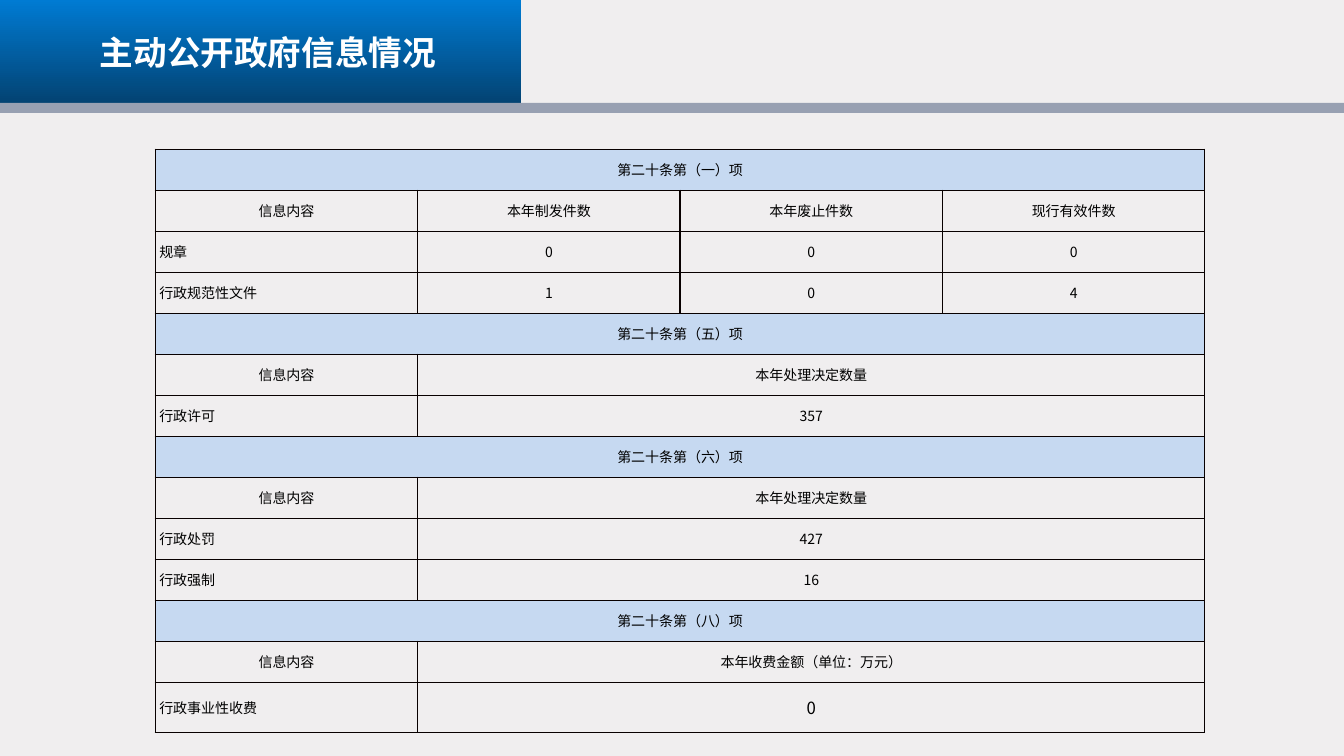
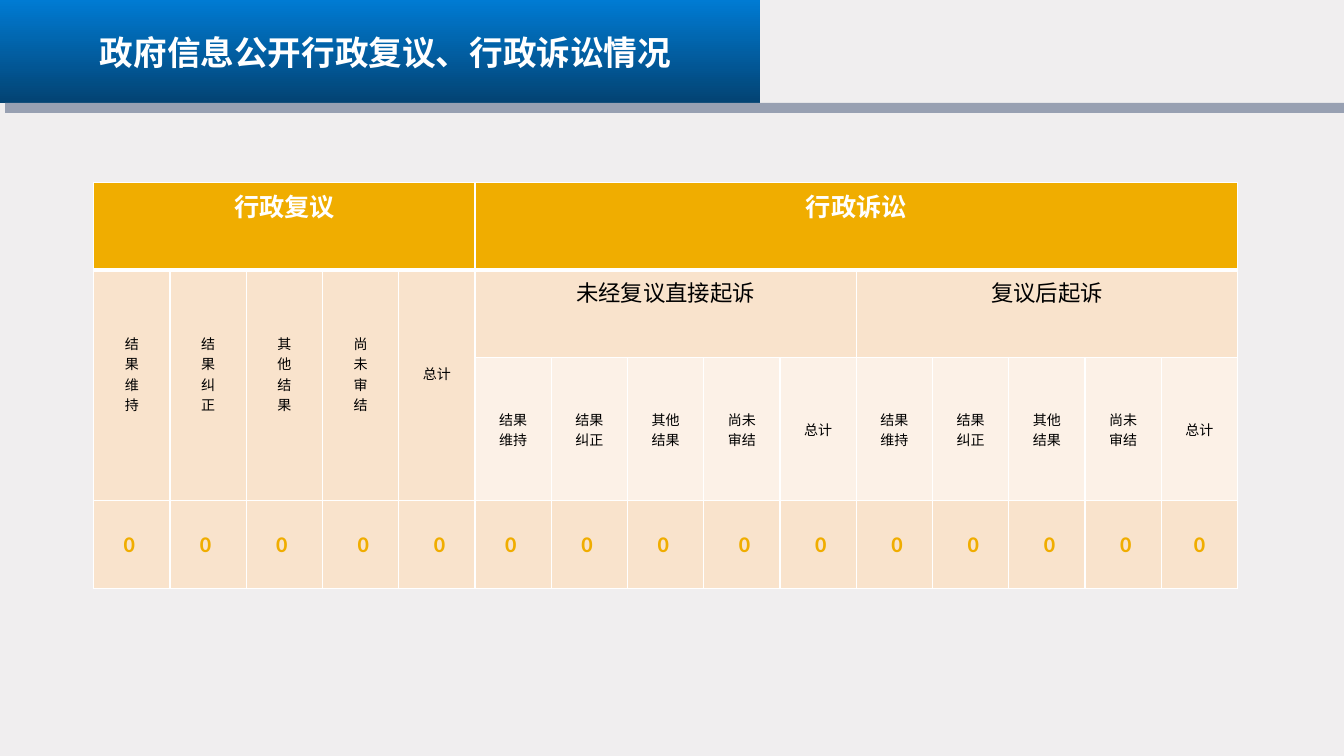
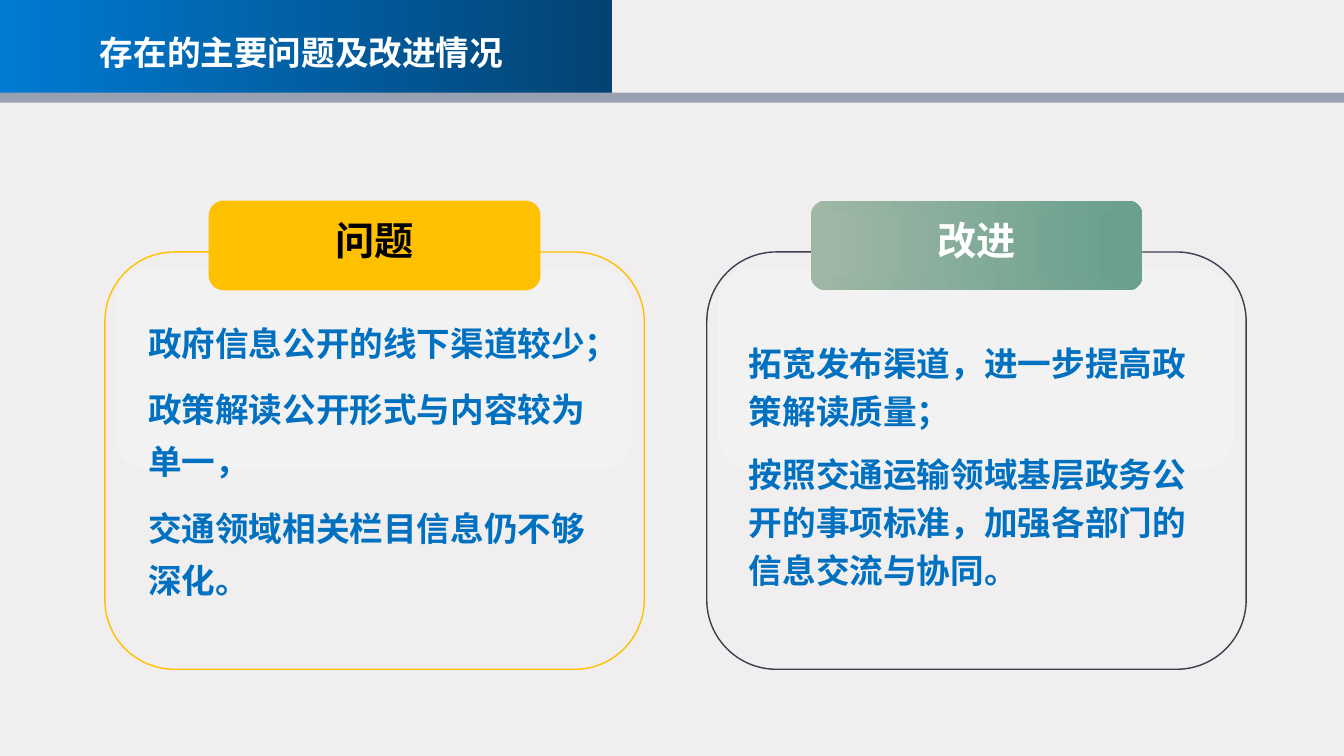
from dataclasses import dataclass
from typing import Optional

from lxml.etree import SubElement
from pptx import Presentation
from pptx.dml.color import RGBColor
from pptx.enum.shapes import MSO_SHAPE
from pptx.enum.text import MSO_ANCHOR, MSO_AUTO_SIZE, PP_ALIGN
from pptx.oxml import parse_xml
from pptx.oxml.ns import nsdecls, qn
from pptx.util import Inches, Pt

COLORS = {
    "background": "F0EEEF", "band_start": "007BD3", "band_end": "034373",
    "rule": "98A0B2", "white": "FFFFFF", "black": "000000",
    "grid": "080000", "section": "C6D9F1", "gold": "F0AD00",
    "cream": "F9E3CC", "ivory": "FCF1E7", "amber": "FFC000",
    "slate": "3B3E4D", "panel": "F2F2F2", "body": "0070C0",
    "sage": "A0B7A5", "green": "6AA18E",
}
FONT = "Noto Sans CJK SC"
SLIDE_WIDTH = 13.33
RESULTS = ["结果维持", "结果纠正", "其他结果", "尚未审结", "总计"]
DISCLOSURE_ROWS = [
    ("第二十条第（一）项",),
    ("信息内容", "本年制发件数", "本年废止件数", "现行有效件数"),
    ("规章", "0", "0", "0"),
    ("行政规范性文件", "1", "0", "4"),
    ("第二十条第（五）项",),
    ("信息内容", "本年处理决定数量"),
    ("行政许可", "357"),
    ("第二十条第（六）项",),
    ("信息内容", "本年处理决定数量"),
    ("行政处罚", "427"),
    ("行政强制", "16"),
    ("第二十条第（八）项",),
    ("信息内容", "本年收费金额（单位：万元）"),
    ("行政事业性收费", "0"),
]


@dataclass(frozen=True)
class Header:
    title: str
    band_width: float
    rule_left: float = 0
    rule_top: float = 1.02
    angle: int = 270


@dataclass(frozen=True)
class TextStyle:
    size: float
    color: str = "black"
    bold: bool = False
    latin: str = FONT
    align: PP_ALIGN = PP_ALIGN.CENTER
    line_spacing: float = 1.0
    space_after: float = 0


@dataclass(frozen=True)
class CellStyle:
    text: TextStyle
    fill: Optional[str] = None
    margins: tuple = (0, 0, 0, 0)
    anchor: MSO_ANCHOR = MSO_ANCHOR.MIDDLE


@dataclass(frozen=True)
class CellSpec:
    row: int
    column: int
    text: str
    style: CellStyle
    rows: int = 1
    columns: int = 1


@dataclass(frozen=True)
class Card:
    left: float
    label: str
    label_color: str
    outline: str
    tab_fill: tuple
    label_fill: tuple
    text_left: float
    text_top: float
    text_height: float
    line_spacing: float
    paragraphs: tuple


def rgb(name: str) -> RGBColor:
    return RGBColor.from_string(COLORS[name])


def paint(fill, colors: tuple, angle: int = 0, end: float = 1) -> None:
    if not colors:
        fill.background()
    elif len(colors) == 1:
        fill.solid()
        fill.fore_color.rgb = rgb(colors[0])
    else:
        fill.gradient()
        fill.gradient_angle = angle
        for stop, color, position in zip(fill.gradient_stops, colors, (0, end)):
            stop.color.rgb = rgb(color)
            stop.position = position


def add_box(slide, kind, left: float, top: float, width: float, height: float,
            colors: tuple = (), angle: int = 0, end: float = 1,
            outline: Optional[str] = None):
    box = slide.shapes.add_shape(
        kind, Inches(left), Inches(top), Inches(width), Inches(height))
    box.shadow.inherit = False
    paint(box.fill, colors, angle, end)
    if outline:
        box.line.color.rgb = rgb(outline)
        box.line.width = Pt(1)
    else:
        box.line.fill.background()
    return box


def write(frame, text: str, style: TextStyle) -> None:
    frame.text = text
    for para in frame.paragraphs:
        para.alignment = style.align
        para.space_before = Pt(0)
        para.space_after = Pt(style.space_after)
        para.line_spacing = style.line_spacing
        for span in para.runs:
            span.font.size = Pt(style.size)
            span.font.bold = style.bold
            span.font.name = style.latin
            span.font.color.rgb = rgb(style.color)
            east_asian = SubElement(span.font._element, qn("a:ea"))
            east_asian.set("typeface", FONT)


def add_text(slide, left: float, top: float, width: float, height: float,
             text: str, style: TextStyle):
    box = slide.shapes.add_textbox(
        Inches(left), Inches(top), Inches(width), Inches(height))
    box.text_frame.word_wrap = True
    write(box.text_frame, text, style)
    return box


def add_page(deck, header: Header):
    page = deck.slides.add_slide(deck.slide_layouts[5])
    add_box(page, MSO_SHAPE.RECTANGLE, 0, 0, header.band_width, header.rule_top,
            ("band_start", "band_end"), header.angle)
    add_box(page, MSO_SHAPE.RECTANGLE, header.rule_left, header.rule_top,
            SLIDE_WIDTH - header.rule_left, 0.1, ("rule",))
    title = page.shapes.title
    title.left, title.top = Inches(0.89), Inches(0.27)
    title.width, title.height = Inches(10.49), Inches(0.5)
    frame = title.text_frame
    frame.word_wrap = True
    frame.auto_size = MSO_AUTO_SIZE.NONE
    frame.vertical_anchor = MSO_ANCHOR.TOP
    write(frame, header.title, TextStyle(24, "white", True, align=PP_ALIGN.LEFT))
    title.element.getparent().append(title.element)
    return page


def set_borders(cell, color: str, bottom: float = 1) -> None:
    properties = cell._tc.get_or_add_tcPr()
    for index, (side, width) in enumerate(
            (("L", 1), ("R", 1), ("T", 1), ("B", bottom))):
        properties.insert(index, parse_xml(
            f'<a:ln{side} {nsdecls("a")} w="{Pt(width)}"><a:solidFill>'
            f'<a:srgbClr val="{COLORS[color]}"/></a:solidFill></a:ln{side}>'))


def style_cell(cell, style: CellStyle) -> None:
    paint(cell.fill, (style.fill,) if style.fill else ())
    cell.vertical_anchor = style.anchor
    (cell.margin_left, cell.margin_top,
     cell.margin_right, cell.margin_bottom) = map(Inches, style.margins)


def add_grid(slide, left: float, top: float, width: float, columns: int,
             heights: list, specs: list, border: str,
             header_bottom: float = 1) -> None:
    table = slide.shapes.add_table(
        len(heights), columns, Inches(left), Inches(top),
        Inches(width), Inches(sum(heights))).table
    table.first_row = table.horz_banding = False
    for column in table.columns:
        column.width = Inches(width / columns)
    for row, height in zip(table.rows, heights):
        row.height = Inches(height)
    for spec in specs:
        for row in range(spec.row, spec.row + spec.rows):
            for column in range(spec.column, spec.column + spec.columns):
                cell = table.cell(row, column)
                style_cell(cell, spec.style)
                set_borders(cell, border, header_bottom if row == 0 else 1)
        origin = table.cell(spec.row, spec.column)
        if spec.rows * spec.columns > 1:
            origin.merge(table.cell(spec.row + spec.rows - 1,
                                    spec.column + spec.columns - 1))
        write(origin.text_frame, spec.text, spec.style.text)


def build_disclosure(deck) -> None:
    page = add_page(deck, Header("主动公开政府信息情况", 5.17))
    last = len(DISCLOSURE_ROWS) - 1
    specs = []
    for row, texts in enumerate(DISCLOSURE_ROWS):
        for column, text in enumerate(texts):
            is_name = column == 0 and len(texts) > 1 and text != "信息内容"
            style = CellStyle(
                TextStyle(12 if row == last and column else 10,
                          align=PP_ALIGN.LEFT if is_name else PP_ALIGN.CENTER),
                "section" if len(texts) == 1 else None, (0.04, 0, 0.04, 0))
            columns = 4 - column if column == len(texts) - 1 else 1
            specs.append(CellSpec(row, column, text, style, columns=columns))
    heights = [(5.79 - 0.5) / last] * last + [0.5]
    add_grid(page, 1.54, 1.48, 10.41, 4, heights, specs, "grid")


def build_review(deck) -> None:
    page = add_page(deck, Header("政府信息公开行政复议、行政诉讼情况", 7.54, 0.05))
    padding = (0.1, 0.05, 0.1, 0.05)
    small = TextStyle(10)
    upright = CellStyle(small, "cream", (0, 0, 0, 0.23))
    outcome = CellStyle(small, "ivory")
    group = CellStyle(TextStyle(16), "cream", padding, MSO_ANCHOR.TOP)
    specs = []
    for column, text, columns, latin in (
            (0, "行政复议", 5, FONT), (5, "行政诉讼", 10, "Arial")):
        head = CellStyle(TextStyle(18, "white", True, latin), "gold",
                         padding, MSO_ANCHOR.TOP)
        specs.append(CellSpec(0, column, text, head, columns=columns))
    specs += [CellSpec(1, 5, "未经复议直接起诉", group, columns=5),
              CellSpec(1, 10, "复议后起诉", group, columns=5)]
    for index, result in enumerate(RESULTS):
        stacked = result if result == "总计" else "\n".join(result)
        paired = "\n".join(filter(None, (result[:2], result[2:])))
        specs.append(CellSpec(1, index, stacked, upright, rows=2))
        specs += [CellSpec(2, start + index, paired, outcome)
                  for start in (5, 10)]
    count = TextStyle(16, "gold", True, "Calibri")
    for column in range(15):
        if column in (0, 1, 2, 5, 6, 7):
            margins = (0, 0, 0.05, 0)
        elif column < 14:
            margins = (0.05, 0, 0, 0)
        else:
            margins = (0, 0, 0, 0)
        specs.append(CellSpec(3, column, "0", CellStyle(count, "cream", margins)))
    add_grid(page, 0.93, 1.81, 11.35, 15, [0.87, 0.87, 1.42, 0.87],
             specs, "white", 3)


def add_card(page, card: Card) -> None:
    rounded = MSO_SHAPE.ROUNDED_RECTANGLE
    add_box(page, rounded, card.left, 2.5, 5.35, 4.14, outline=card.outline)
    add_box(page, rounded, card.left + 0.11, 2.66, 5.12, 2.01, ("panel",))
    add_box(page, rounded, card.left + 1.03, 1.99, 3.29, 0.89,
            card.tab_fill, end=0.94)
    add_text(page, card.text_left, card.text_top, 4.7, card.text_height,
             "\n".join(card.paragraphs),
             TextStyle(24, "body", True, align=PP_ALIGN.LEFT,
                       line_spacing=card.line_spacing, space_after=10))
    label = add_text(page, card.left + 1.17, 2.1, 3.01, 0.65, card.label,
                     TextStyle(28, card.label_color, True))
    label.text_frame.margin_bottom = Inches(0)
    paint(label.fill, card.label_fill, end=0.94)


def build_problems(deck) -> None:
    page = add_page(deck, Header("存在的主要问题及改进情况", 6.07,
                                 rule_top=0.92, angle=0))
    greens = ("sage", "green")
    cards = (
        Card(1.04, "问题", "black", "amber", ("amber",), (),
             1.37, 3.03, 3.16, 1.3,
             ("政府信息公开的线下渠道较少；",
              "政策解读公开形式与内容较为单一，",
              "交通领域相关栏目信息仍不够深化。")),
        Card(7.01, "改进", "white", "slate", greens, greens,
             7.33, 3.27, 2.85, 1.2,
             ("拓宽发布渠道，进一步提高政策解读质量；",
              "按照交通运输领域基层政务公开的事项标准，加强各部门的信息交流与协同。")),
    )
    for card in cards:
        add_card(page, card)


def main() -> None:
    deck = Presentation()
    deck.slide_width, deck.slide_height = Inches(SLIDE_WIDTH), Inches(7.5)
    paint(deck.slide_master.background.fill, ("background",))
    build_disclosure(deck)
    build_review(deck)
    build_problems(deck)
    deck.save("out.pptx")


if __name__ == "__main__":
    main()
